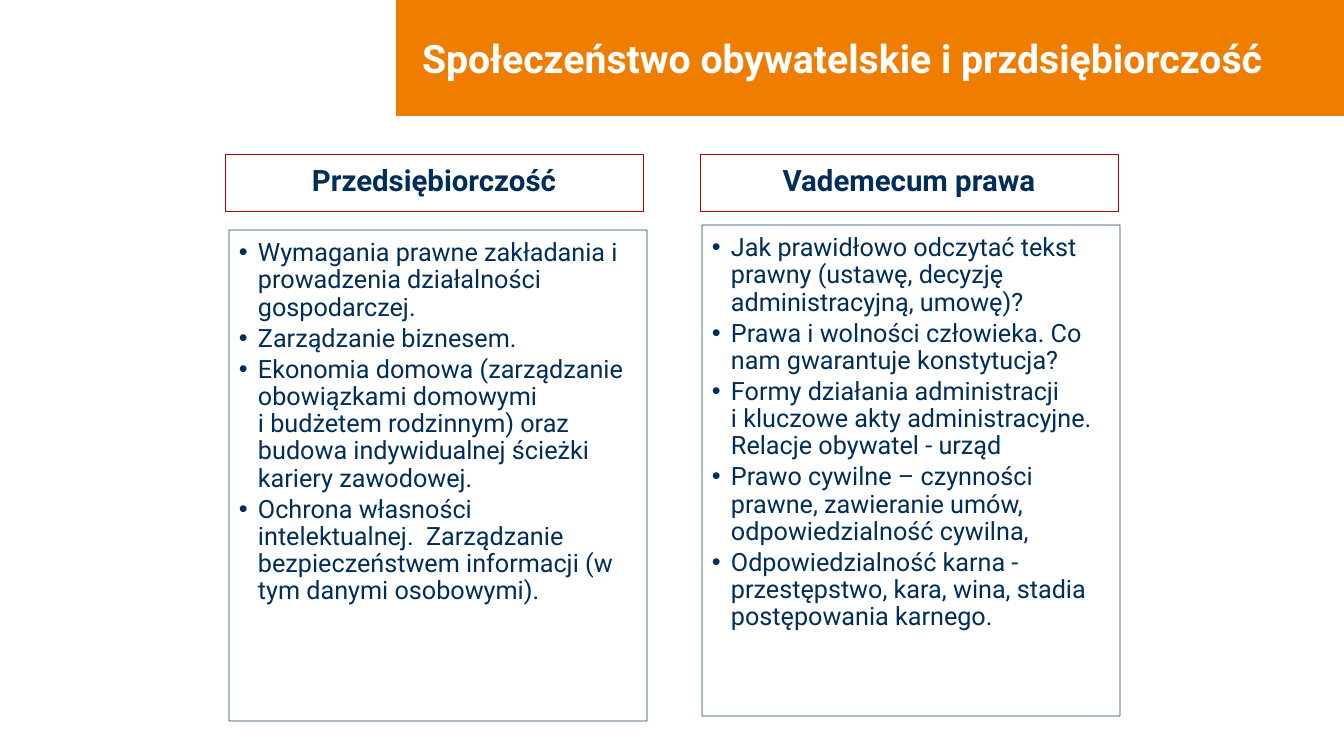
import pptx
import pptx.util
import pptx.dml.color
import pptx.enum.shapes
import pptx.enum.text
import lxml.etree

EMU = 12192000 / 1344
FONT = "Roboto"
WHITE, NAVY, RED, ORANGE = "FFFFFF", "002D59", "AE0000", "EF7D00"
ALIGN = pptx.enum.text.PP_ALIGN
ANCHOR = pptx.enum.text.MSO_ANCHOR

LAW = [
    "Jak prawidłowo odczytać tekst prawny (ustawę, decyzję administracyjną, umowę)?",
    "Prawa i wolności człowieka. Co nam gwarantuje konstytucja?",
    "Formy działania administracji \ni kluczowe akty administracyjne. Relacje obywatel - urząd",
    "Prawo cywilne – czynności prawne, zawieranie umów,  odpowiedzialność cywilna,",
    "Odpowiedzialność karna - przestępstwo, kara, wina, stadia postępowania karnego.",
]
BUSINESS = [
    "Wymagania prawne zakładania i prowadzenia działalności gospodarczej.",
    "Zarządzanie biznesem.",
    "Ekonomia domowa (zarządzanie obowiązkami domowymi \ni budżetem rodzinnym) oraz "
    "budowa indywidualnej ścieżki kariery zawodowej.",
    "Ochrona własności intelektualnej.  Zarządzanie bezpieczeństwem informacji "
    "(w tym danymi osobowymi).",
]


def px(n):
    return pptx.util.Emu(round(n * EMU))


def color(code):
    return pptx.dml.color.RGBColor.from_string(code)


def tag(parent, name, **attrs):
    node = lxml.etree.SubElement(parent, pptx.oxml.ns.qn(name))
    for key, value in attrs.items():
        node.set(key, str(value))
    return node


def rect(slide, box, fill, line, width, alpha=100):
    shape = slide.shapes.add_shape(
        pptx.enum.shapes.MSO_SHAPE.RECTANGLE, *map(px, box))
    shape.shadow.inherit = False
    shape.line.width = pptx.util.Pt(width)
    for part, code in ((shape.fill, fill), (shape.line.fill, line)):
        part.solid()
        part.fore_color.rgb = color(code)
    if alpha < 100:
        for node in shape._element.spPr.iter(pptx.oxml.ns.qn("a:srgbClr")):
            tag(node, "a:alpha", val=alpha * 1000)
    return shape


def write(shape, lines, size, ink=NAVY, bold=False, align=ALIGN.LEFT,
          anchor=ANCHOR.MIDDLE, inset=(16, 9, 16, 9), space=1, after=0, bullet=0):
    """Fill the shape with paragraphs; bullet is the hanging indent in px."""
    frame = shape.text_frame
    frame.word_wrap = True
    frame.vertical_anchor = anchor
    (frame.margin_left, frame.margin_top,
     frame.margin_right, frame.margin_bottom) = map(px, inset)
    for i, line in enumerate(lines):
        para = frame.add_paragraph() if i else frame.paragraphs[0]
        para.text = line
        para.alignment = align
        para.line_spacing = space
        para.space_after = pptx.util.Pt(after)
        if bullet:
            para.level = 1
            props = para._p.get_or_add_pPr()
            props.set("marL", str(px(bullet)))
            props.set("indent", str(-px(bullet)))
            tag(props, "a:buFont", typeface="Arial")
            tag(props, "a:buChar", char="•")
        for run in para.runs:
            run.font.name = FONT
            run.font.size = pptx.util.Pt(size)
            run.font.bold = bold
            run.font.color.rgb = color(ink)


def banner(slide, box, title):
    write(rect(slide, box, ORANGE, ORANGE, 0.75), [title], 28, WHITE, True,
          ALIGN.JUSTIFY, inset=(25, 5, 10, 5))


def column(slide, box, shift, title, items):
    """Heading above a list, which is moved by shift (right, down)."""
    left, top, width, height = box
    right, down = shift
    head = rect(slide, (left, top, width, 57), WHITE, RED, 0.5)
    write(head, [title], 21, bold=True, align=ALIGN.CENTER, space=0.9)
    body = rect(slide, (left + right, top + down, width, height - down),
                WHITE, NAVY, 0.5, 90)
    write(body, items, 18, anchor=ANCHOR.TOP, inset=(10, 10, 14, 16),
          space=0.9, after=2.7, bullet=19)


def main():
    deck = pptx.Presentation()
    deck.slide_width, deck.slide_height = px(1344), px(756)
    slide = deck.slides.add_slide(deck.slide_layouts[6])
    banner(slide, (397, 0, 947, 116), "Społeczeństwo obywatelskie i przdsiębiorczość")
    column(slide, (225, 154, 418, 567), (4, 76), "Przedsiębiorczość", BUSINESS)
    column(slide, (700, 154, 418, 562), (2, 71), "Vademecum prawa", LAW)
    deck.save("out.pptx")


if __name__ == "__main__":
    main()
